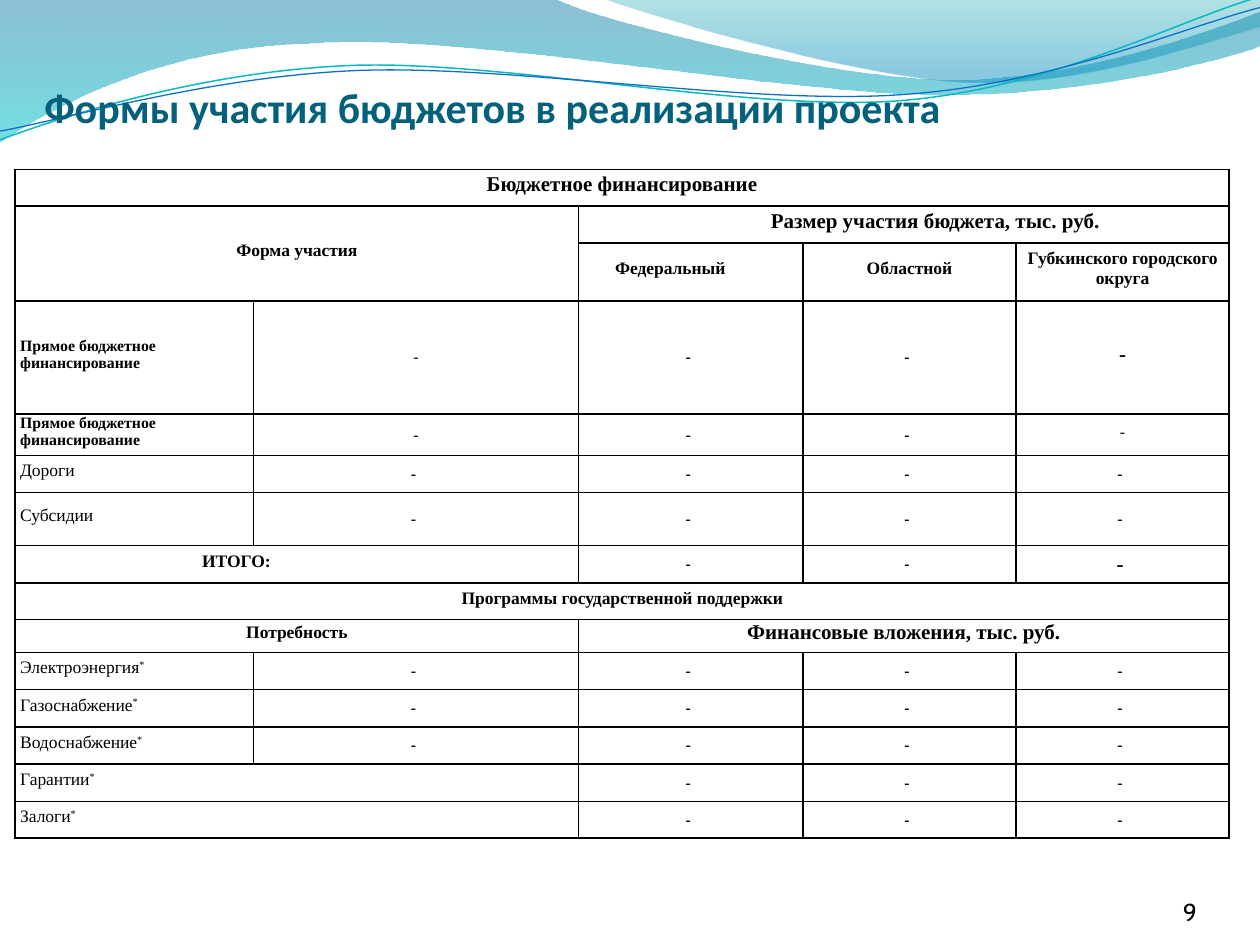
from dataclasses import dataclass
from math import cos, radians, sin
from typing import NamedTuple

from lxml.etree import Element, SubElement
from pptx import Presentation
from pptx.dml.color import RGBColor
from pptx.enum.text import MSO_ANCHOR, MSO_AUTO_SIZE, PP_ALIGN
from pptx.oxml.ns import qn
from pptx.util import Emu, Inches, Pt

UNIT = Inches(10) // 100  # one hundredth of the slide width


@dataclass(frozen=True)
class Theme:
    title_font: str = "Calibri"
    table_font: str = "Times New Roman"
    number_font: str = "Cabin"
    title_color: str = "04617B"
    ink: str = "000000"
    title_size: float = 24
    number_size: float = 14
    heading_size: float = 12
    label_size: float = 10
    small_size: float = 9
    border_width: float = 1


THEME = Theme()


class Stop(NamedTuple):
    position: float
    color: str
    opacity: int


class Wave(NamedTuple):
    """Each segment is one point (straight) or three points (Bezier)."""
    start: tuple
    segments: list
    stops: tuple = ()
    line_color: str = ""
    line_width: float = 0
    center: tuple = (0, 0)
    rotation: float = 0


class Entry(NamedTuple):
    row: int
    column: int
    text: str
    size: float = THEME.label_size
    bold: bool = True
    columns: int = 1
    rows: int = 1
    align: PP_ALIGN = PP_ALIGN.CENTER
    indent: float = 0
    right_margin: float = 0.4
    bottom_margin: float = 0.5
    mark: str = ""


WAVES = [
    Wave((0, 0), [
        [(44, -0.1)],
        [(47.6, 1.7), (66.4, 6.3), (75.8, 6.3)],
        [(85.3, 6.3), (95.8, 2.6), (100, 0.9)],
        [(100.1, 3.6)],
        [(98.3, 4.4), (87, 7.6), (74.6, 7.5)],
        [(62.2, 7.5), (38.2, 2.8), (25.7, 3.4)],
        [(12.9, 3.6), (4.6, 8.3), (-0.1, 11.3)],
        [(0, 0)],
    ], (Stop(0, "0074A1", 45), Stop(1, "00C6CF", 55))),
    Wave((47.9, -0.1), [
        [(50.9, 1.1), (68.2, 6.2), (76.9, 6.5)],
        [(85.6, 6.9), (96.1, 3.2), (100, 2.1)],
        [(100, 0)],
        [(47.9, -0.1)],
    ], (Stop(0, "00A1A9", 30), Stop(0.8, "008BBF", 45))),
    Wave((0, 11.1), [
        [(4.8, 9.3), (15.8, 5.7), (27.7, 5.2)],
        [(39.5, 4.7), (59.3, 8.9), (71.3, 8)],
        [(83.3, 7.1), (93.8, 1.5), (99.8, -0.2)],
    ], line_color="0AB8BF", line_width=0.85, center=(49.9, 5.75), rotation=357.3),
    Wave((0, 10.4), [
        [(4.7, 9.6), (16.4, 6.1), (28.3, 5.6)],
        [(40.3, 5.1), (59.7, 8.4), (71.7, 7.5)],
        [(83.6, 6.7), (94.1, 2.1), (100, 0.6)],
    ], line_color="0F6FC6", line_width=0.75, center=(49.95, 5.9), rotation=357.3),
]

COLUMN_WIDTHS = [18.92, 25.8, 17.8, 16.92, 16.92]
ROW_HEIGHTS = [2.92, 2.92, 4.6, 9, 3.1, 2.96, 4.2, 2.96, 2.92, 2.6, 2.96, 2.96, 2.96, 2.96, 2.92]

HEADINGS = [
    Entry(0, 0, "Бюджетное финансирование", THEME.heading_size, columns=5),
    Entry(1, 0, "Форма участия", columns=2, rows=2),
    Entry(1, 2, "Размер участия бюджета, тыс. руб.", THEME.heading_size, columns=3, indent=5),
    Entry(2, 2, "Федеральный", align=PP_ALIGN.LEFT, indent=2.5),
    Entry(2, 3, "Областной"),
    Entry(2, 4, "Губкинского городского округа"),
    Entry(8, 0, "Программы государственной поддержки", columns=5),
    Entry(9, 0, "Потребность", columns=2),
    Entry(9, 2, "Финансовые вложения, тыс. руб.", THEME.heading_size, columns=3),
]
LABELS = [
    Entry(3, 0, "Прямое бюджетное финансирование", THEME.small_size),
    Entry(4, 0, "Прямое бюджетное финансирование", THEME.small_size),
    Entry(5, 0, "Дороги", bold=False),
    Entry(6, 0, "Субсидии", bold=False),
    Entry(7, 0, "ИТОГО:", columns=2, indent=14.45),
    Entry(10, 0, "Электроэнергия", bold=False, mark="*"),
    Entry(11, 0, "Газоснабжение", bold=False, mark="*"),
    Entry(12, 0, "Водоснабжение", bold=False, mark="*"),
    Entry(13, 0, "Гарантии", bold=False, columns=2, mark="*"),
    Entry(14, 0, "Залоги", bold=False, columns=2, mark="*"),
]
DASH = Entry(0, 0, "-", THEME.small_size, right_margin=0.8, bottom_margin=0)
DIRECT_FORM = dict(bold=False, right_margin=0.4)
DIRECT_DISTRICT = dict(right_margin=0.4, bottom_margin=0.5)
SPECIAL_DASHES = {
    (3, 1): DIRECT_FORM,
    (4, 1): DIRECT_FORM,
    (3, 4): dict(DIRECT_DISTRICT, size=THEME.heading_size),
    (4, 4): dict(DIRECT_DISTRICT, bold=False),
    (7, 4): dict(size=THEME.heading_size),
}


def units(value: float) -> Emu:
    return Emu(round(value * UNIT))


def unrotated(point: tuple, wave: Wave) -> tuple:
    angle = radians(-wave.rotation)
    x, y = (value - middle for value, middle in zip(point, wave.center))
    return (units(wave.center[0] + x * cos(angle) - y * sin(angle)),
            units(wave.center[1] + x * sin(angle) + y * cos(angle)))


def bend_segments(shape, segments: list) -> None:
    """Join each run of three line points into one Bezier curve."""
    path = next(shape._element.iter(qn("a:path")))
    lines = iter(path.findall(qn("a:lnTo")))
    for segment in segments:
        group = [next(lines) for _ in segment]
        if len(group) == 3:
            curve = Element(qn("a:cubicBezTo"))
            group[0].addprevious(curve)
            for line in group:
                curve.append(line[0])
                path.remove(line)


def draw_wave(slide, wave: Wave) -> None:
    builder = slide.shapes.build_freeform(*unrotated(wave.start, wave))
    points = [unrotated(point, wave) for segment in wave.segments for point in segment]
    builder.add_line_segments(points, close=bool(wave.stops))
    shape = builder.convert_to_shape()
    bend_segments(shape, wave.segments)
    shape.rotation = wave.rotation
    shape.shadow.inherit = False
    if not wave.stops:
        shape.fill.background()
        shape.line.color.rgb = RGBColor.from_string(wave.line_color)
        shape.line.width = Pt(wave.line_width)
        return
    shape.line.fill.background()
    shape.fill.gradient()
    shape.fill.gradient_angle = 270
    for gradient_stop, stop in zip(shape.fill.gradient_stops, wave.stops):
        gradient_stop.position = stop.position
        gradient_stop.color.rgb = RGBColor.from_string(stop.color)
    for color, stop in zip(shape._element.iter(qn("a:srgbClr")), wave.stops):
        SubElement(color, qn("a:alpha"), val=str(stop.opacity * 1000))


def add_borders(cell) -> None:
    properties = cell._tc.get_or_add_tcPr()
    for side in ("lnL", "lnR", "lnT", "lnB"):
        line = SubElement(properties, qn(f"a:{side}"), w=str(Pt(THEME.border_width)))
        SubElement(SubElement(line, qn("a:solidFill")), qn("a:srgbClr"), val=THEME.ink)


def format_run(run, font: str, size: float, color: str, bold: bool = False) -> None:
    run.font.name, run.font.size, run.font.bold = font, Pt(size), bold
    run.font.color.rgb = RGBColor.from_string(color)


def write_entry(table, entry: Entry) -> None:
    cell = table.cell(entry.row, entry.column)
    if entry.columns * entry.rows > 1:
        cell.merge(table.cell(entry.row + entry.rows - 1, entry.column + entry.columns - 1))
    cell.vertical_anchor = MSO_ANCHOR.MIDDLE
    cell.margin_left, cell.margin_top = units(0.4), 0
    cell.margin_right, cell.margin_bottom = units(entry.right_margin), units(entry.bottom_margin)
    paragraph = cell.text_frame.paragraphs[0]
    paragraph.text = entry.text
    paragraph.alignment = entry.align
    if entry.indent:
        paragraph._p.get_or_add_pPr().set("marL", str(units(entry.indent)))
    if entry.mark:
        mark = paragraph.add_run()
        mark.text = entry.mark
        mark.font._element.set("baseline", "30000")
    for run in paragraph.runs:
        format_run(run, THEME.table_font, entry.size, THEME.ink, entry.bold)


def draw_table(slide) -> None:
    table = slide.shapes.add_table(
        len(ROW_HEIGHTS), len(COLUMN_WIDTHS), units(1.2), units(13.44),
        units(sum(COLUMN_WIDTHS)), units(sum(ROW_HEIGHTS))).table
    table.first_row = table.horz_banding = False
    for column, width in zip(table.columns, COLUMN_WIDTHS):
        column.width = units(width)
    for row, height in zip(table.rows, ROW_HEIGHTS):
        row.height = units(height)
    for cell in table.iter_cells():
        add_borders(cell)
        cell.fill.background()
    for heading in HEADINGS:
        write_entry(table, heading)
    for label in LABELS:
        write_entry(table, label._replace(align=PP_ALIGN.LEFT))
        for column in range(label.columns, len(COLUMN_WIDTHS)):
            special = SPECIAL_DASHES.get((label.row, column), {})
            write_entry(table, DASH._replace(row=label.row, column=column, **special))


def place_text(shape, box: tuple, text: str, align: PP_ALIGN, top_margin: float = 0):
    shape.left, shape.top, shape.width, shape.height = map(units, box)
    frame = shape.text_frame
    frame.text = text
    frame.word_wrap = True
    frame.auto_size = MSO_AUTO_SIZE.NONE
    frame.vertical_anchor = MSO_ANCHOR.BOTTOM
    frame.margin_left = frame.margin_right = frame.margin_bottom = 0
    frame.margin_top = units(top_margin)
    frame.paragraphs[0].alignment = align
    return frame.paragraphs[0].runs[0]


def main() -> None:
    presentation = Presentation()
    presentation.slide_width, presentation.slide_height = units(100), units(75)
    slide = presentation.slides.add_slide(presentation.slide_layouts[5])
    for wave in WAVES:
        draw_wave(slide, wave)
    number = place_text(slide.shapes.add_textbox(0, 0, 0, 0), (86.7, 69.5, 8.3, 4), "9", PP_ALIGN.RIGHT)
    format_run(number, THEME.number_font, THEME.number_size, THEME.ink)
    draw_table(slide)
    title = slide.shapes.title
    heading = place_text(title, (3.52, 1.3, 95, 9.2),
                         "Формы участия бюджетов в реализации проекта", PP_ALIGN.LEFT, 0.5)
    format_run(heading, THEME.title_font, THEME.title_size, THEME.title_color, True)
    slide.shapes._spTree.append(title._element)  # bring the title in front of the waves
    presentation.save("out.pptx")


if __name__ == "__main__":
    main()
